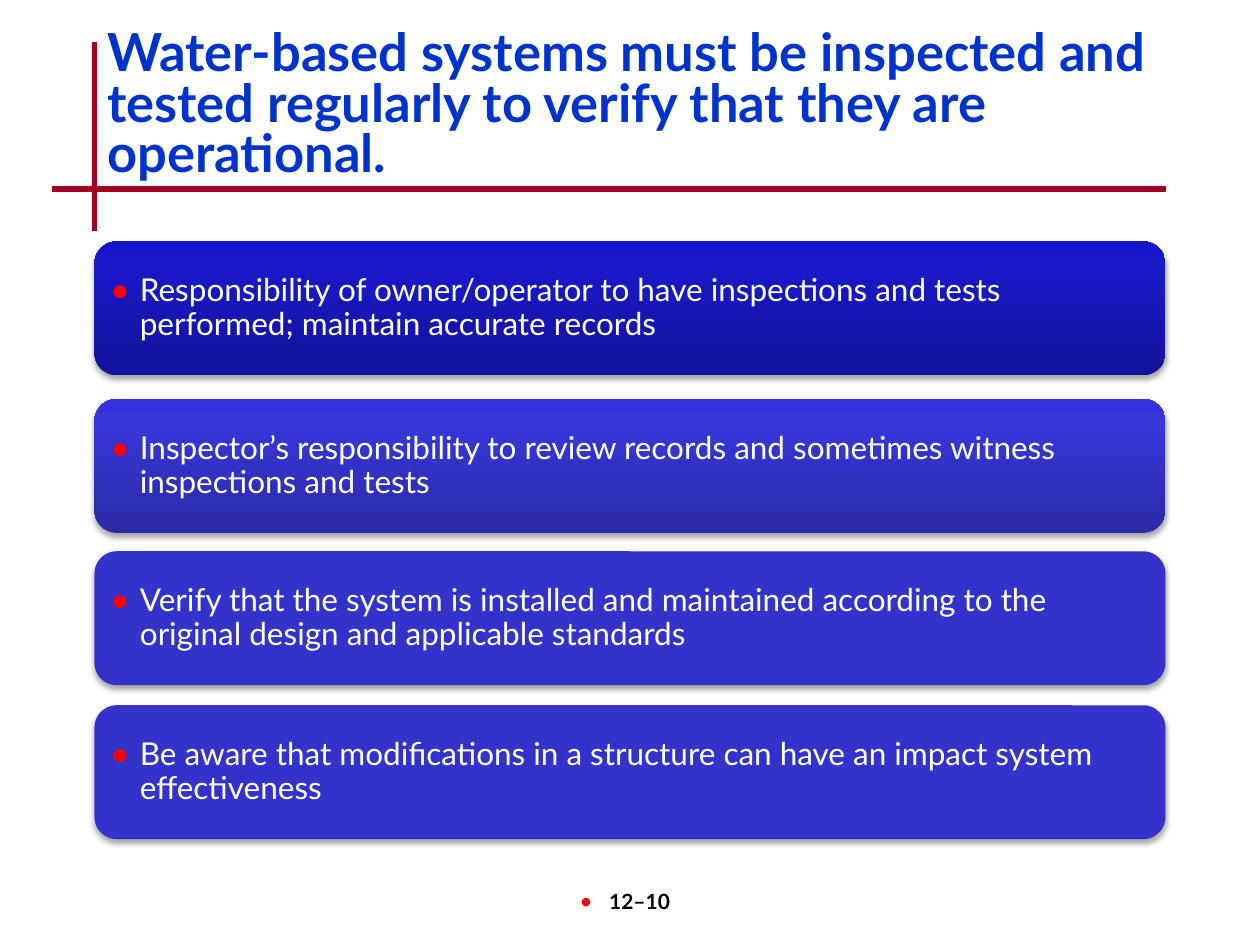
from lxml.etree import SubElement
from pptx import Presentation
from pptx.dml.color import RGBColor
from pptx.enum.shapes import MSO_CONNECTOR, MSO_SHAPE
from pptx.enum.text import MSO_ANCHOR, MSO_AUTO_SIZE, PP_ALIGN
from pptx.oxml.ns import qn
from pptx.util import Pt

FONT = "Lato"
BLUE = RGBColor(0x00, 0x33, 0xCC)
CARD_BLUE = RGBColor(0x33, 0x33, 0xCC)
CRIMSON = RGBColor(0xA5, 0x00, 0x21)
RED = RGBColor(0xFF, 0x00, 0x00)
WHITE = RGBColor(0xFF, 0xFF, 0xFF)
BLACK = RGBColor(0x00, 0x00, 0x00)

# Gradient stops from bottom to top, as (percent, colour)
DEEP = [(0, "13139A"), (80, "1919C8"), (100, "1515CC")]
BRIGHT = [(0, "2A2AA7"), (80, "3636D9"), (100, "3333DD")]

TITLE = ("Water-based systems must be inspected and tested regularly "
         "to verify that they are operational.")
PAGE_NUMBER = "12–10"
# Top, gradient (None for a plain fill), text
CARDS = [
    (138, DEEP, "Responsibility of owner/operator to have inspections and "
                "tests performed; maintain accurate records"),
    (228, BRIGHT, "Inspector’s responsibility to review records and sometimes "
                  "witness inspections and tests"),
    (315, None, "Verify that the system is installed and maintained according "
                "to the original design and applicable standards"),
    (403, None, "Be aware that modifications in a structure can have an "
                "impact system effectiveness"),
]
RULES = [(54, 24, 54, 132), (30, 108, 666, 108)]
LEFT, WIDTH, CARD_HEIGHT = 54, 612, 76.5
CARD_INSET, BULLET_INDENT = 5.25, 17


def add_rule(slide, ends):
    rule = slide.shapes.add_connector(MSO_CONNECTOR.STRAIGHT, *map(Pt, ends))
    rule.line.color.rgb = CRIMSON
    rule.line.width = Pt(3)
    SubElement(rule._element.spPr, qn("a:effectLst"))


def add_bullet(para):
    """Give the paragraph a red hanging bullet."""
    props = para._p.get_or_add_pPr()
    props.set("marL", str(Pt(BULLET_INDENT)))
    props.set("indent", str(-Pt(BULLET_INDENT)))
    SubElement(SubElement(props, qn("a:buClr")), qn("a:srgbClr"), val=str(RED))
    SubElement(props, qn("a:buSzPct"), val="110000")
    SubElement(props, qn("a:buFont"), typeface=FONT)
    SubElement(props, qn("a:buChar"), char="•")


def add_text(para, text, size, color, bold=False):
    span = para.add_run()
    span.text = text
    span.font.name = FONT
    span.font.size = Pt(size)
    span.font.bold = bold
    span.font.color.rgb = color


def fill_card(card, stops):
    if stops is None:
        card.fill.solid()
        card.fill.fore_color.rgb = CARD_BLUE
        return
    card.fill.gradient()
    card.fill.gradient_angle = 90
    stop_list = card._element.spPr.find(qn("a:gradFill")).find(qn("a:gsLst"))
    for old in list(stop_list):
        stop_list.remove(old)
    for percent, color in stops:
        stop = SubElement(stop_list, qn("a:gs"), pos=str(percent * 1000))
        SubElement(stop, qn("a:srgbClr"), val=color)


def add_soft_shadow(card):
    card.shadow.inherit = False
    effects = card._element.spPr.find(qn("a:effectLst"))
    shadow = SubElement(effects, qn("a:outerShdw"), blurRad=str(Pt(3.1)),
                        dist=str(Pt(1.8)), dir="5400000", rotWithShape="0")
    color = SubElement(shadow, qn("a:srgbClr"), val=str(BLACK))
    SubElement(color, qn("a:alpha"), val="35000")


def add_card(slide, top, stops, text):
    card = slide.shapes.add_shape(MSO_SHAPE.ROUNDED_RECTANGLE, Pt(LEFT),
                                  Pt(top), Pt(WIDTH), Pt(CARD_HEIGHT))
    fill_card(card, stops)
    card.line.fill.background()
    add_soft_shadow(card)
    frame = card.text_frame
    frame.word_wrap = True
    frame.vertical_anchor = MSO_ANCHOR.MIDDLE
    frame.margin_left = frame.margin_right = Pt(CARD_INSET)
    frame.margin_top = frame.margin_bottom = Pt(CARD_INSET)
    para = frame.paragraphs[0]
    para.alignment = PP_ALIGN.LEFT
    para.line_spacing = 0.9
    add_bullet(para)
    add_text(para, text, 18, WHITE)


def set_title(slide):
    title = slide.shapes.title
    title.left, title.top = Pt(LEFT), Pt(14.4)
    title.width, title.height = Pt(WIDTH), Pt(72)
    frame = title.text_frame
    frame.word_wrap = True
    frame.auto_size = MSO_AUTO_SIZE.NONE
    frame.vertical_anchor = MSO_ANCHOR.TOP
    para = frame.paragraphs[0]
    para.alignment = PP_ALIGN.LEFT
    para.line_spacing = 0.8
    add_text(para, TITLE, 30, BLUE, bold=True)


def add_page_number(slide):
    box = slide.shapes.add_textbox(Pt(282), Pt(504), Pt(150), Pt(36))
    box.text_frame.word_wrap = True
    para = box.text_frame.paragraphs[0]
    para.alignment = PP_ALIGN.CENTER
    add_bullet(para)
    add_text(para, PAGE_NUMBER, 12, BLACK, bold=True)


def main():
    deck = Presentation()
    deck.slide_width, deck.slide_height = Pt(720), Pt(540)
    slide = deck.slides.add_slide(deck.slide_layouts[5])
    for ends in RULES:
        add_rule(slide, ends)
    add_page_number(slide)
    set_title(slide)
    for card in CARDS:
        add_card(slide, *card)
    deck.save("out.pptx")


if __name__ == "__main__":
    main()
